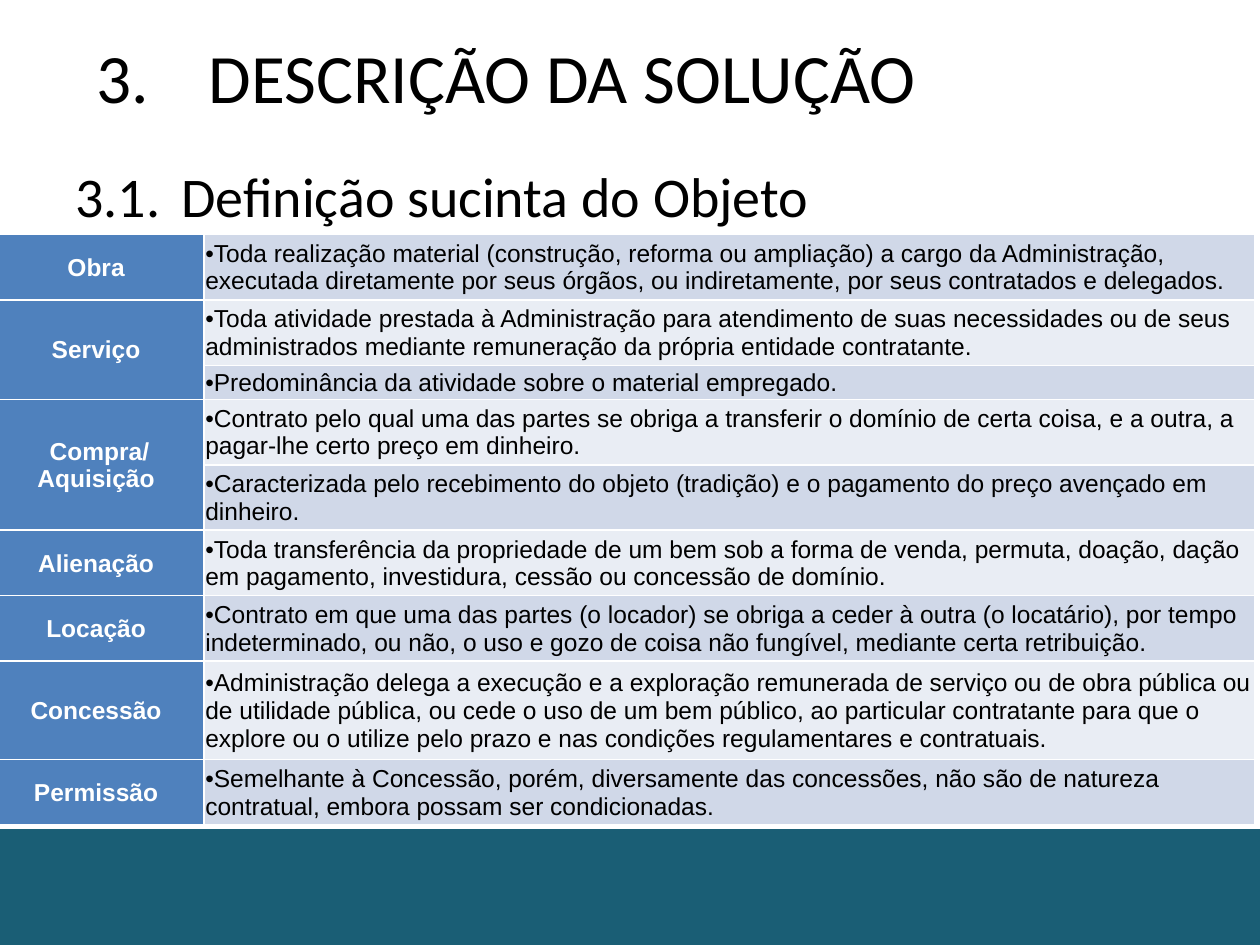
from lxml import etree
from pptx import Presentation
from pptx.dml.color import RGBColor
from pptx.enum.shapes import MSO_SHAPE
from pptx.enum.text import MSO_ANCHOR, PP_ALIGN
from pptx.oxml.ns import qn
from pptx.util import Inches, Pt

RECT = MSO_SHAPE.RECTANGLE
TOP, MIDDLE = MSO_ANCHOR.TOP, MSO_ANCHOR.MIDDLE
LEFT, CENTER = PP_ALIGN.LEFT, PP_ALIGN.CENTER

TEAL, BLUE, WHITE, BLACK = "1A5E75", "4F81BD", "FFFFFF", "000000"
BANDS = ["D0D8E8", "E9EDF4"]
COLS = [1.66, 8.34]
ROWS = [0.52, 0.52, 0.27, 0.52, 0.52, 0.52, 0.52, 0.78, 0.52]
LABEL = {"name": "Arial", "size": Pt(14), "bold": True}
PLAIN = {"name": "Arial", "size": Pt(14), "bold": False}
INSETS = {
    "margin_left": Inches(0.01),
    "margin_right": Inches(0.01),
    "margin_top": Inches(0.01),
    "margin_bottom": 0,
    "vertical_anchor": MIDDLE,
}

TERMS = [
    ("Obra ", [
        "Toda realização material (construção, reforma ou ampliação) a cargo da Administração, "
        "executada diretamente por seus órgãos, ou indiretamente, por seus contratados e delegados.",
    ]),
    ("Serviço ", [
        "Toda atividade prestada à Administração para atendimento de suas necessidades ou de seus "
        "administrados mediante remuneração da própria entidade contratante.",
        "Predominância da atividade sobre o material empregado.",
    ]),
    ("Compra/\nAquisição ", [
        "Contrato pelo qual uma das partes se obriga a transferir o domínio de certa coisa, "
        "e a outra, a pagar-lhe certo preço em dinheiro.",
        "Caracterizada pelo recebimento do objeto (tradição) e o pagamento do preço avençado "
        "em dinheiro.",
    ]),
    ("Alienação ", [
        "Toda transferência da propriedade de um bem sob a forma de venda, permuta, doação, "
        "dação em pagamento, investidura, cessão ou concessão de domínio.",
    ]),
    ("Locação ", [
        "Contrato em que uma das partes (o locador) se obriga a ceder à outra (o locatário), "
        "por tempo indeterminado, ou não, o uso e gozo de coisa não fungível, mediante certa "
        "retribuição.",
    ]),
    ("Concessão ", [
        "Administração delega a execução e a exploração remunerada de serviço ou de obra pública "
        "ou de utilidade pública, ou cede o uso de um bem público, ao particular contratante para "
        "que o explore ou o utilize pelo prazo e nas condições regulamentares e contratuais.",
    ]),
    ("Permissão ", [
        "Semelhante à Concessão, porém, diversamente das concessões, não são de natureza "
        "contratual, embora possam ser condicionadas.",
    ]),
]


def paint(part, color):
    part.solid()
    part.fore_color.rgb = RGBColor.from_string(color)


def apply(item, values):
    for key, value in values.items():
        setattr(item, key, value)


def write(frame, text, form, color, align):
    frame.text = text
    for para in frame.paragraphs:
        para.alignment = align
        for run in para.runs:
            apply(run.font, form)
            paint(run.font.fill, color)


def add_band(slide, box, color):
    band = slide.shapes.add_shape(RECT, *map(Inches, box))
    band.shadow.inherit = False
    paint(band.fill, color)
    band.line.fill.background()


def add_head(slide, box, number, title, size, tab, anchor):
    frame = slide.shapes.add_textbox(*map(Inches, box)).text_frame
    apply(frame, {"word_wrap": True, "vertical_anchor": anchor})
    write(frame, f"{number}\t{title}", {"name": "Calibri", "size": Pt(size)}, BLACK, LEFT)
    props = frame.paragraphs[0]._p.get_or_add_pPr()
    stops = etree.SubElement(props, qn("a:tabLst"))
    etree.SubElement(stops, qn("a:tab"), pos=str(Inches(tab)), algn="l")


def add_edges(cell, color, width):
    props = cell._tc.get_or_add_tcPr()
    for side in ("lnL", "lnR", "lnT", "lnB"):
        line = etree.SubElement(props, qn(f"a:{side}"), w=str(Pt(width)))
        fill = etree.SubElement(line, qn("a:solidFill"))
        etree.SubElement(fill, qn("a:srgbClr"), val=color)


def style_cell(cell, color):
    apply(cell, INSETS)
    add_edges(cell, WHITE, 1)
    paint(cell.fill, color)


def add_terms(slide, left, top):
    box = map(Inches, (left, top, sum(COLS), sum(ROWS)))
    table = slide.shapes.add_table(len(ROWS), len(COLS), *box).table
    for col, width in zip(table.columns, COLS):
        col.width = Inches(width)
    for index, (row, height) in enumerate(zip(table.rows, ROWS)):
        row.height = Inches(height)
        style_cell(row.cells[0], BLUE)
        style_cell(row.cells[1], BANDS[index % 2])
    start = 0
    for label, notes in TERMS:
        first = table.cell(start, 0)
        if len(notes) > 1:
            first.merge(table.cell(start + len(notes) - 1, 0))
        write(first.text_frame, label, LABEL, WHITE, CENTER)
        for index, note in enumerate(notes, start):
            write(table.cell(index, 1).text_frame, f"•{note}", PLAIN, BLACK, LEFT)
        start += len(notes)


def main():
    deck = Presentation()
    deck.slide_width, deck.slide_height = Inches(10), Inches(7.5)
    slide = deck.slides.add_slide(deck.slide_layouts[6])
    paint(slide.background.fill, WHITE)
    add_band(slide, (0, 6.58, 10, 0.92), TEAL)
    add_head(slide, (0.67, 0.21, 8.66, 0.79), "3.", "DESCRIÇÃO DA SOLUÇÃO", 39.6, 0.89, MIDDLE)
    add_head(slide, (0.5, 1.23, 9, 5.47), "3.1.", "Definição sucinta do Objeto", 32, 0.84, TOP)
    add_terms(slide, -0.04, 1.86)
    deck.save("out.pptx")


if __name__ == "__main__":
    main()
